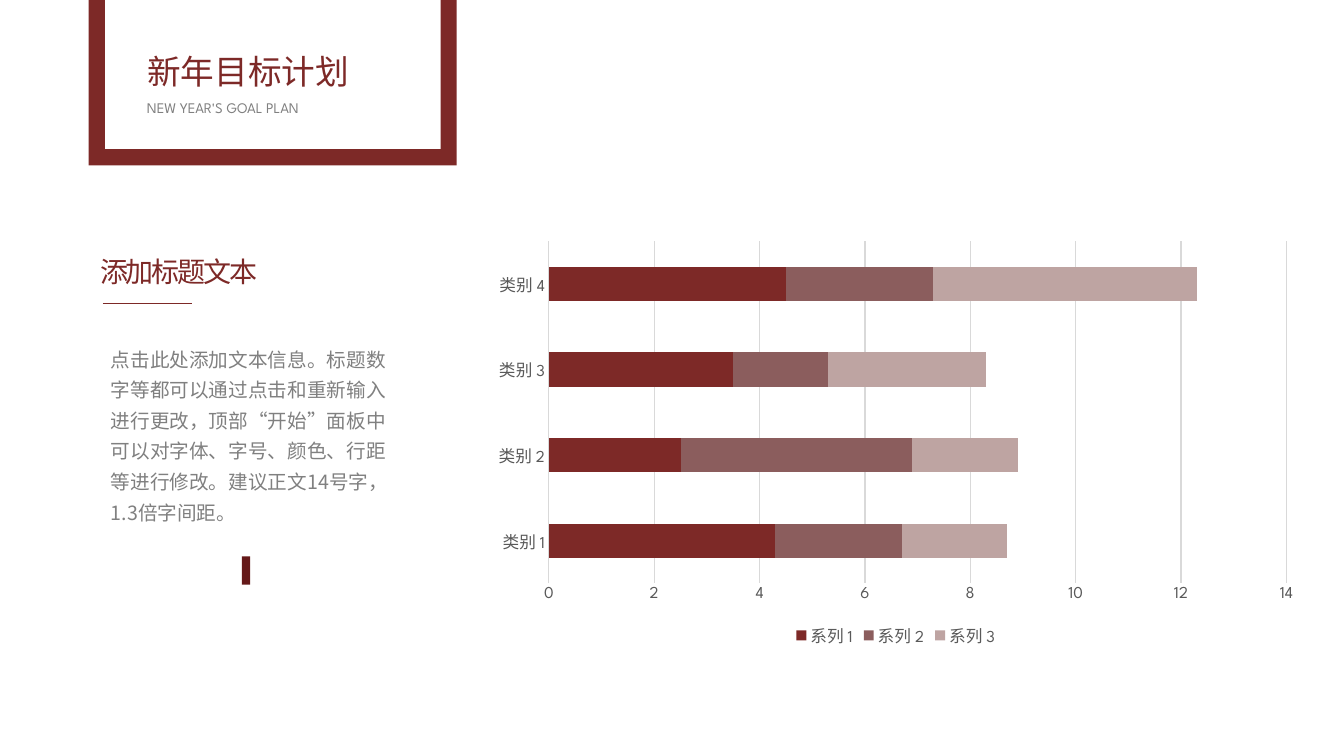
from dataclasses import dataclass

from lxml import etree
from pptx import Presentation
from pptx.chart.data import CategoryChartData
from pptx.dml.color import RGBColor
from pptx.enum.chart import XL_CHART_TYPE, XL_LEGEND_POSITION, XL_TICK_MARK
from pptx.enum.shapes import MSO_CONNECTOR, MSO_SHAPE
from pptx.enum.text import MSO_ANCHOR, MSO_AUTO_SIZE, PP_ALIGN
from pptx.oxml.ns import qn
from pptx.util import Pt

BARS = XL_CHART_TYPE.BAR_STACKED
BOTTOM = XL_LEGEND_POSITION.BOTTOM
NO_TICK = XL_TICK_MARK.NONE
LINE = MSO_CONNECTOR.STRAIGHT
FRAME, RECT = MSO_SHAPE.FRAME, MSO_SHAPE.RECTANGLE
TOP, FIT = MSO_ANCHOR.TOP, MSO_AUTO_SIZE.SHAPE_TO_FIT_TEXT
LEFT, CENTER = PP_ALIGN.LEFT, PP_ALIGN.CENTER
TITLE_ONLY = 5
SCALE = 9144  # EMU per px, 100 px to the inch


@dataclass(frozen=True)
class Theme:
    red: str = "7D2927"
    rose: str = "8B5D5D"
    pale: str = "BEA4A2"
    dark: str = "651919"
    gray: str = "808080"
    label: str = "595959"
    grid: str = "D9D9D9"
    latin: str = "League Spartan"
    han: str = "Noto Sans CJK SC"
    title: float = 24
    head: float = 20
    body: float = 14
    sub: float = 10.5
    axis: float = 11.9


THEME = Theme()


def px(*sizes):
    return [size * SCALE for size in sizes]


def rgb(code):
    return RGBColor.from_string(code)


def style(font, size, color, face):
    font.size, font.name = Pt(size), face
    font.color.rgb = rgb(color)


def add_han(props):
    """Set the East Asian face, which follows the Latin one."""
    han = etree.Element(qn("a:ea"), typeface=THEME.han)
    props.find(qn("a:latin")).addnext(han)


def write(shape, text, size, color, face=THEME.han, align=LEFT, wrap=True):
    frame = shape.text_frame
    frame.text = text
    frame.word_wrap, frame.auto_size = wrap, FIT
    frame.vertical_anchor = TOP
    para = frame.paragraphs[0]
    para.alignment = align
    style(para.font, size, color, face)
    add_han(para._p.pPr.find(qn("a:defRPr")))
    return para


def add_block(slide, kind, box, color):
    block = slide.shapes.add_shape(kind, *px(*box))
    block.shadow.inherit = False
    block.fill.solid()
    block.fill.fore_color.rgb = rgb(color)
    block.line.fill.background()
    return block


def add_banner(slide, x, y, w, h):
    # Title and its English line
    title = slide.shapes.title
    title.left, title.top, title.width, title.height = px(x + 48, y + 229, 342, 50)
    write(title, "新年目标计划", THEME.title, THEME.red)
    sub = slide.shapes.add_textbox(*px(x + 48, y + 277, 193, 28))
    write(sub, "NEW YEAR'S GOAL PLAN", THEME.sub, THEME.gray, THEME.latin, wrap=False)
    # Frame hanging from the top edge
    frame = add_block(slide, FRAME, (x, y, w, h), THEME.red)
    frame.adjustments[0] = 0.046


def add_note(slide, x, y, w, h):
    # Body text
    body = slide.shapes.add_textbox(*px(x + 36, y + 85, w - 36, 191))
    para = write(
        body,
        "点击此处添加文本信息。标题数字等都可以通过点击和重新输入进行更改，"
        "顶部“开始”面板中可以对字体、字号、颜色、行距等进行修改。"
        "建议正文14号字，1.3倍字间距。",
        THEME.body, THEME.gray)
    para.line_spacing = 1.3
    # Heading and rule
    head = slide.shapes.add_textbox(*px(x, y, 227, 44))
    para = write(head, "添加标题文本", THEME.head, THEME.red, align=CENTER)
    para._p.pPr.find(qn("a:defRPr")).set("spc", "-150")
    rule = slide.shapes.add_connector(LINE, *px(x + 38, y + 53, x + 126, y + 53))
    rule.line.color.rgb = rgb(THEME.red)
    rule.line.width = Pt(0.5)
    etree.SubElement(rule._element.spPr, qn("a:effectLst"))
    # Accent bar
    add_block(slide, RECT, (x + 176, y + h - 28, 8, 28), THEME.dark)


def add_bars(slide, x, y, w, h):
    data = CategoryChartData()
    data.categories = [f"类别 {n}" for n in range(1, 5)]
    rows = [(4.3, 2.5, 3.5, 4.5), (2.4, 4.4, 1.8, 2.8), (2, 2, 3, 5)]
    for n, row in enumerate(rows, 1):
        data.add_series(f"系列 {n}", row)
    chart = slide.shapes.add_chart(BARS, *px(x, y, w, h), data).chart
    chart.has_title = False
    style(chart.font, THEME.axis, THEME.label, THEME.latin)

    # Bars
    plot = chart.plots[0]
    plot.gap_width, plot.overlap = 150, 100
    plot.vary_by_categories = False
    for series, color in zip(plot.series, (THEME.red, THEME.rose, THEME.pale)):
        series.format.fill.solid()
        series.format.fill.fore_color.rgb = rgb(color)

    # Axes and legend
    cats, vals = chart.category_axis, chart.value_axis
    vals.minimum_scale, vals.maximum_scale, vals.major_unit = 0, 14, 2
    vals.has_major_gridlines = True
    vals.format.line.fill.background()
    for line in (cats.format.line, vals.major_gridlines.format.line):
        line.color.rgb = rgb(THEME.grid)
        line.width = Pt(0.75)
    chart.has_legend = True
    chart.legend.position = BOTTOM
    chart.legend.include_in_layout = False
    for axis in (cats, vals):
        axis.major_tick_mark = axis.minor_tick_mark = NO_TICK
    for part in (cats.tick_labels, vals.tick_labels, chart.legend):
        style(part.font, THEME.axis, THEME.label, THEME.latin)
    for props in chart._chartSpace.iter(qn("a:defRPr")):
        add_han(props)


def main():
    deck = Presentation()
    deck.slide_width, deck.slide_height = px(1333, 750)
    slide = deck.slides.add_slide(deck.slide_layouts[TITLE_ONLY])
    add_banner(slide, 88, -184, 365, 348)
    add_note(slide, 64, 248, 344, 332)
    add_bars(slide, 478, 231, 821, 416)
    deck.save("out.pptx")


if __name__ == "__main__":
    main()
